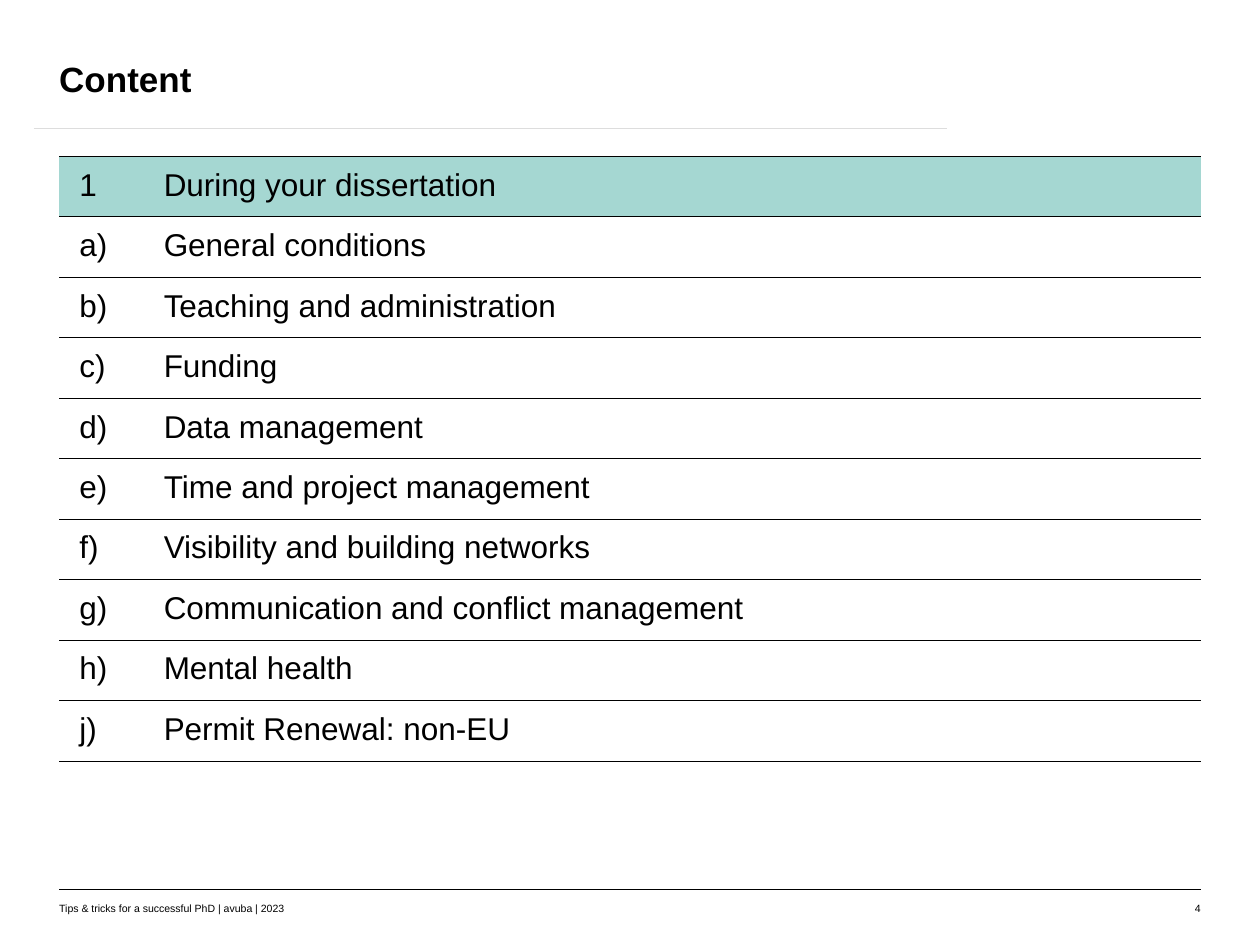
from lxml.etree import SubElement
from pptx import Presentation
from pptx.dml.color import RGBColor
from pptx.enum.shapes import MSO_CONNECTOR
from pptx.enum.text import MSO_ANCHOR, PP_ALIGN
from pptx.oxml import parse_xml
from pptx.oxml.ns import nsdecls, qn
from pptx.util import Inches, Pt

COLORS = {"text": "000000", "rule": "DDDDDD", "highlight": "A5D7D2"}
WIDTH, HEIGHT = 10, 7.5
MARGIN = 0.47
CONTENT_WIDTH = WIDTH - 2 * MARGIN
FOOTER_TOP = 7.14
ROW_HEIGHT = 4.77 / 10
NUMBER_COLUMN = 0.67
TOPICS = [
    ("1", "During your dissertation"),
    ("a)", "General conditions"),
    ("b)", "Teaching and administration"),
    ("c)", "Funding"),
    ("d)", "Data management"),
    ("e)", "Time and project management"),
    ("f)", "Visibility and building networks"),
    ("g)", "Communication and conflict management"),
    ("h)", "Mental health"),
    ("j)", "Permit Renewal: non-EU"),
]
TITLE_FONT = {"name": "Arial", "size": Pt(20), "bold": True}
TABLE_FONT = {"name": "Arial", "size": Pt(18), "bold": False}
FOOTER_FONT = {"name": "Arial", "size": Pt(6), "bold": False}
CELL_FORMAT = {
    "margin_left": Inches(0.16),
    "margin_right": Inches(0.16),
    "margin_top": Inches(0.09),
    "margin_bottom": Inches(0.09),
    "vertical_anchor": MSO_ANCHOR.TOP,
}


def apply_format(target, values):
    """Set every attribute named in values on the target."""
    for name, value in values.items():
        setattr(target, name, value)


def write_text(paragraph, text, font_format):
    """Write one formatted run of text."""
    run = paragraph.add_run()
    run.text = text
    apply_format(run.font, font_format)
    run.font.color.rgb = RGBColor.from_string(COLORS["text"])


def add_text(slide, box, text, font_format, paragraph_format, margin_top=0):
    """Add a one-paragraph text box."""
    frame = slide.shapes.add_textbox(*map(Inches, box)).text_frame
    frame_format = {
        "word_wrap": True, "vertical_anchor": MSO_ANCHOR.TOP,
        "margin_left": 0, "margin_right": 0,
        "margin_top": Inches(margin_top), "margin_bottom": 0,
    }
    apply_format(frame, frame_format)
    apply_format(frame.paragraphs[0], paragraph_format)
    write_text(frame.paragraphs[0], text, font_format)


def add_rule(slide, left, right, top, color, weight):
    """Add a horizontal line."""
    ends = map(Inches, (left, top, right, top))
    connector = slide.shapes.add_connector(MSO_CONNECTOR.STRAIGHT, *ends)
    connector.line.color.rgb = RGBColor.from_string(COLORS[color])
    connector.line.width = Pt(weight)
    SubElement(connector._element.spPr, qn("a:effectLst"))


def set_borders(cell):
    """Draw thin lines above and below a cell and none at its sides."""
    properties = cell._tc.get_or_add_tcPr()
    solid = f'<a:solidFill><a:srgbClr val="{COLORS["text"]}"/></a:solidFill>'
    sides = {"lnL": "<a:noFill/>", "lnR": "<a:noFill/>", "lnT": solid, "lnB": solid}
    for position, (side, fill) in enumerate(sides.items()):
        border = f'<a:{side} {nsdecls("a")} w="{Pt(0.5)}">{fill}</a:{side}>'
        properties.insert(position, parse_xml(border))


def fill_cell(cell, text, highlighted):
    """Write and style one table cell."""
    apply_format(cell, CELL_FORMAT)
    write_text(cell.text_frame.paragraphs[0], text, TABLE_FONT)
    if highlighted:
        cell.fill.solid()
        cell.fill.fore_color.rgb = RGBColor.from_string(COLORS["highlight"])
    else:
        cell.fill.background()
    set_borders(cell)


def add_topics(slide, top):
    """Add the table of topics with its first row highlighted."""
    box = (MARGIN, top, CONTENT_WIDTH, ROW_HEIGHT * len(TOPICS))
    table = slide.shapes.add_table(len(TOPICS), 2, *map(Inches, box)).table
    apply_format(table, {"first_row": False, "horz_banding": False})
    table.columns[0].width = Inches(NUMBER_COLUMN)
    table.columns[1].width = Inches(CONTENT_WIDTH - NUMBER_COLUMN)
    for row_index, topic in enumerate(TOPICS):
        for column_index, text in enumerate(topic):
            fill_cell(table.cell(row_index, column_index), text, row_index == 0)


def main():
    """Build and save the content slide."""
    presentation = Presentation()
    size = {"slide_width": Inches(WIDTH), "slide_height": Inches(HEIGHT)}
    apply_format(presentation, size)
    slide = presentation.slides.add_slide(presentation.slide_layouts[6])
    right = WIDTH - MARGIN
    add_rule(slide, MARGIN, right, 7.06, "text", 0.25)
    add_rule(slide, 0.27, 7.52, 1.02, "rule", 1)
    add_text(slide, (MARGIN, 0.44, CONTENT_WIDTH, 0.83), "Content", TITLE_FONT,
             {"line_spacing": Pt(25)})
    add_text(slide, (right - 0.16, FOOTER_TOP, 0.16, 0.2), "4", FOOTER_FONT,
             {"alignment": PP_ALIGN.RIGHT}, 0.02)
    add_topics(slide, 1.24)
    add_text(slide, (MARGIN, FOOTER_TOP, 2.36, 0.2),
             "Tips & tricks for a successful PhD | avuba | 2023", FOOTER_FONT,
             {"alignment": PP_ALIGN.LEFT}, 0.02)
    presentation.save("out.pptx")


if __name__ == "__main__":
    main()
